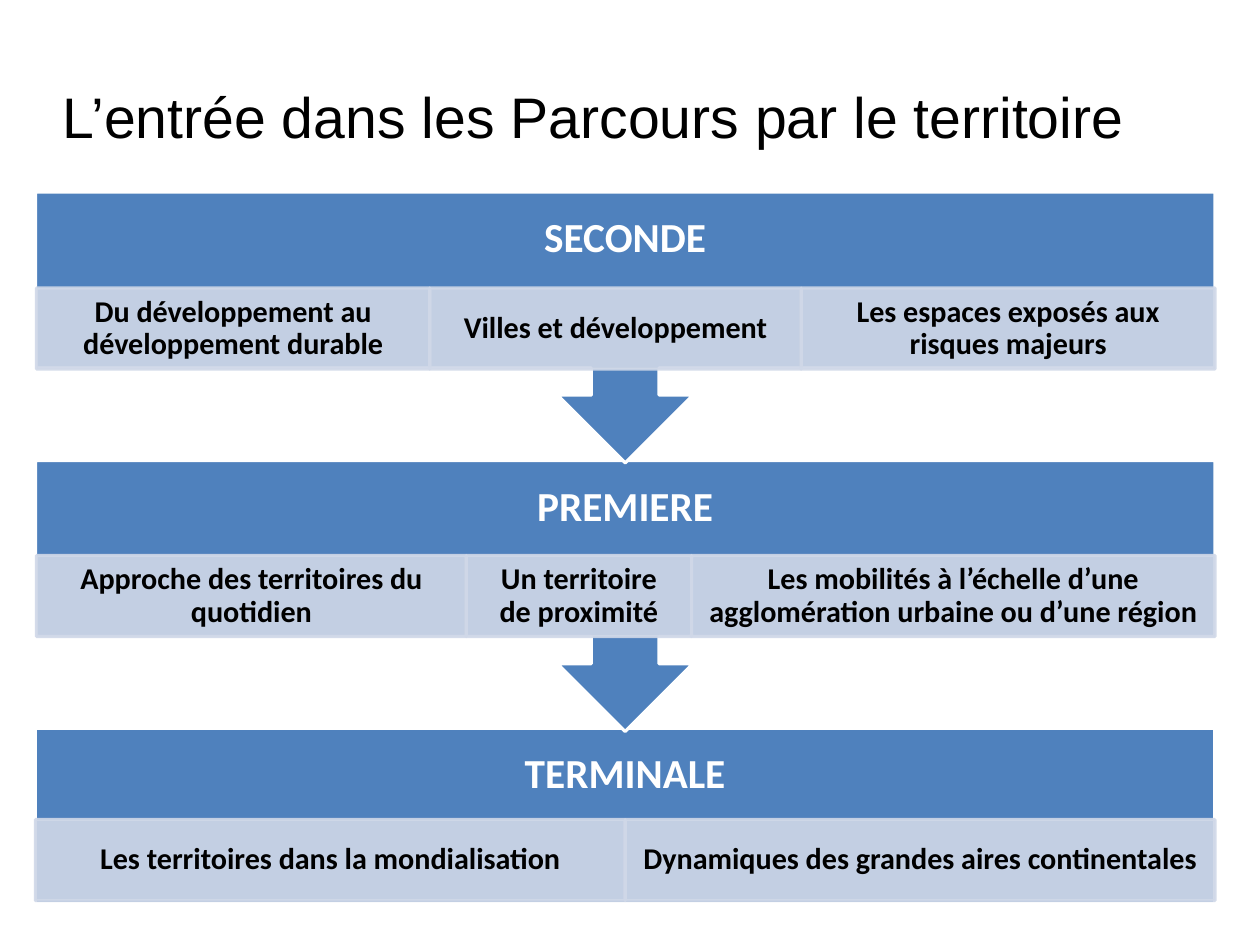
from lxml import etree
from pptx import Presentation
from pptx.dml.color import RGBColor
from pptx.enum.shapes import MSO_SHAPE
from pptx.enum.text import MSO_ANCHOR, MSO_AUTO_SIZE, PP_ALIGN
from pptx.oxml.ns import qn
from pptx.util import Inches, Pt

RECTANGLE = MSO_SHAPE.RECTANGLE
CALLOUT = MSO_SHAPE.DOWN_ARROW_CALLOUT
MIDDLE = MSO_ANCHOR.MIDDLE
LEFT, CENTER = PP_ALIGN.LEFT, PP_ALIGN.CENTER
NO_AUTOFIT = MSO_AUTO_SIZE.NONE

BLUE, PALE, WHITE, BLACK = "4F81BD", "D0D8E8", "FFFFFF", "000000"
BAND_LEFT, BAND_WIDTH, BOX_HEIGHT = 0.31, 10.32, 1.54
HEADER_HEIGHT, THEME_HEIGHT = 0.83, 0.71
CM_PER_INCH = 2.54


def write(shape, text, font_name, size, color, align, margins, spacing=1.0):
    frame = shape.text_frame
    frame.word_wrap = True
    frame.auto_size = NO_AUTOFIT
    frame.vertical_anchor = MIDDLE
    (frame.margin_left, frame.margin_top,
     frame.margin_right, frame.margin_bottom) = [Inches(m) for m in margins]
    frame.text = text
    paragraph = frame.paragraphs[0]
    paragraph.alignment = align
    paragraph.line_spacing = spacing
    font = paragraph.runs[0].font
    font.name, font.size = font_name, Pt(size)
    font.bold = font_name == "Calibri"
    font.color.rgb = RGBColor.from_string(color)


def add_block(kind, left, top, width, height, fill, line):
    block = slide.shapes.add_shape(
        kind, Inches(left), Inches(top), Inches(width), Inches(height))
    block.shadow.inherit = False
    block.fill.solid()
    block.fill.fore_color.rgb = RGBColor.from_string(fill)
    block.line.color.rgb = RGBColor.from_string(line)
    block.line.width = Pt(2)
    return block


# Slide of 28 by 21 cm
prs = Presentation()
prs.slide_width = Inches(28 / CM_PER_INCH)
prs.slide_height = Inches(21 / CM_PER_INCH)
slide = prs.slides.add_slide(prs.slide_layouts[5])

# Title
title = slide.shapes.title
title.left, title.top = Inches(0.55), Inches(0.62)
title.width, title.height = Inches(9.37), Inches(0.79)
write(title, "L’entrée dans les Parcours par le territoire",
      "Arial", 36, BLACK, LEFT, (0, 0, 0, 0))

# School years: name, shape, top, height, top of the themes, (theme, width)
years = [
    ("SECONDE", CALLOUT, 1.68, 2.37, 2.52, [
        ("Du développement au développement durable", 3.44),
        ("Villes et développement", 3.25),
        ("Les espaces exposés aux risques majeurs", 3.62)]),
    ("PREMIERE", CALLOUT, 4.03, 2.37, 4.86, [
        ("Approche des territoires du quotidien", 3.76),
        ("Un territoire de proximité", 1.97),
        ("Les mobilités à l’échelle d’une agglomération urbaine "
         "ou d’une région", 4.58)]),
    ("TERMINALE", RECTANGLE, 6.37, 1.54, 7.17, [
        ("Les territoires dans la mondialisation", 5.16),
        ("Dynamiques des grandes aires continentales", 5.16)]),
]

# Last year first, so that each arrow tip lies over the band below it
for year, kind, top, height, themes_top, themes in reversed(years):
    band = add_block(kind, BAND_LEFT, top, BAND_WIDTH, height, BLUE, WHITE)
    below_header = BOX_HEIGHT - HEADER_HEIGHT
    write(band, year, "Calibri", 26, WHITE, CENTER,
          (0.2, 0.2, 0.2, 0.2 + below_header), 0.9)

    # Row of slightly transparent themes, ending at the right of the band
    left = BAND_LEFT + BAND_WIDTH - sum(width for _, width in themes)
    for theme, width in themes:
        cell = add_block(RECTANGLE, left, themes_top, width, THEME_HEIGHT,
                         PALE, PALE)
        for color in cell._element.spPr.iter(qn("a:srgbClr")):
            etree.SubElement(color, qn("a:alpha"), val="90000")
        write(cell, theme, "Calibri", 19, BLACK, CENTER,
              (0.15, 0.03, 0.15, 0.03), 0.9)
        left += width

prs.save("out.pptx")
